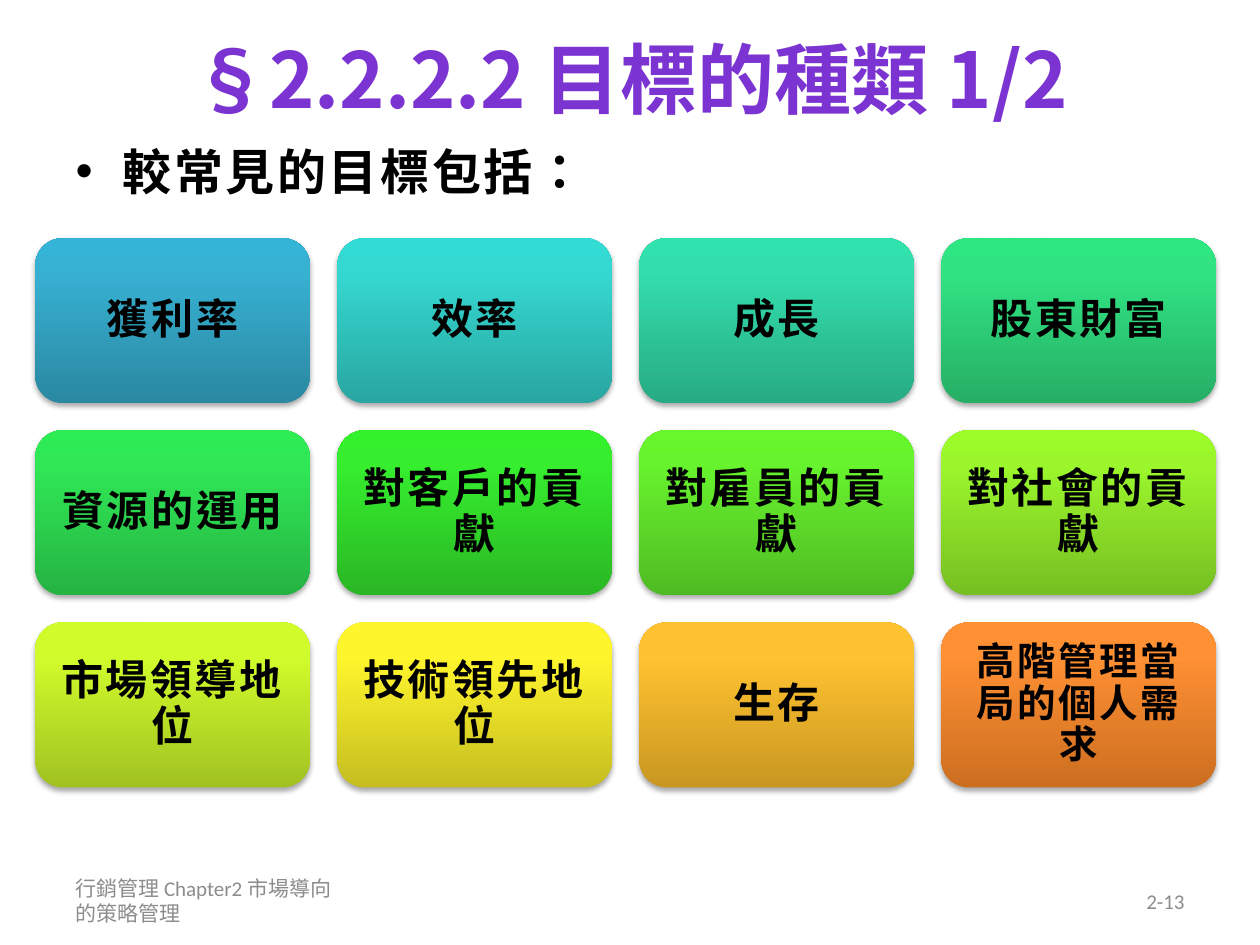
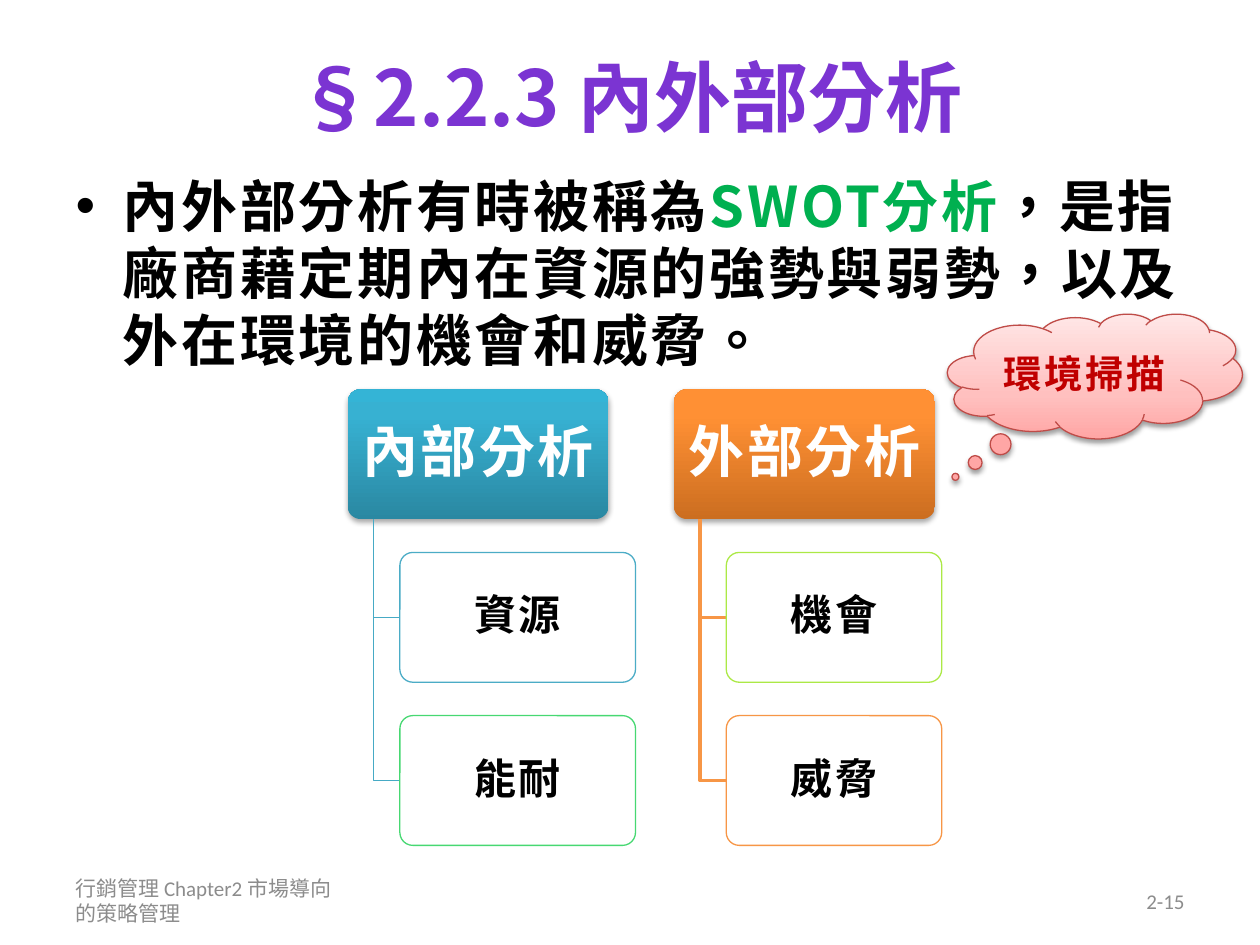
from lxml import etree
from pptx import Presentation
from pptx.dml.color import RGBColor
from pptx.enum.shapes import MSO_SHAPE
from pptx.enum.text import MSO_ANCHOR, MSO_AUTO_SIZE, PP_ALIGN
from pptx.oxml.ns import qn
from pptx.util import Inches, Pt

ROUNDED, CLOUD = MSO_SHAPE.ROUNDED_RECTANGLE, MSO_SHAPE.CLOUD_CALLOUT
LEFT, CENTER, RIGHT = PP_ALIGN.LEFT, PP_ALIGN.CENTER, PP_ALIGN.RIGHT
MIDDLE = MSO_ANCHOR.MIDDLE
NO_FIT = MSO_AUTO_SIZE.NONE

CJK_FONT, FOOTER_FONT = "Noto Sans CJK SC", "Calibri"
BLACK = RGBColor(0x00, 0x00, 0x00)
WHITE = RGBColor(0xFF, 0xFF, 0xFF)
PURPLE = RGBColor(0x7B, 0x34, 0xD2)
GREEN = RGBColor(0x00, 0xB0, 0x50)
GREY = RGBColor(0x8C, 0x8C, 0x8C)
DARK_RED = RGBColor(0xC0, 0x00, 0x00)
CLOUD_EDGE = RGBColor(0xBF, 0x4C, 0x48)
BLUE_LINE = RGBColor(0x46, 0xAA, 0xC5)
BLUE_EDGE = RGBColor(0x4B, 0xAC, 0xC6)
GREEN_EDGE = RGBColor(0x47, 0xD8, 0x72)
LIME_EDGE = RGBColor(0xAC, 0xE9, 0x46)
ORANGE = RGBColor(0xF7, 0x96, 0x46)


def ramp(*colours):
    """Colours of a gradient, from bottom to top."""
    return [RGBColor.from_string(colour) for colour in colours]


BLUE_RAMP = ramp("2A88A2", "37B1D2", "34B4D6")
ORANGE_RAMP = ramp("CC6E20", "FF9034", "FF9136")
PINK_RAMP = ramp("FFA6A5", "FFC0BF", "FFE7E7")

# Content
FOOTER = "行銷管理 Chapter2 市場導向的策略管理"

GOALS_TITLE = "§2.2.2.2 目標的種類 1/2"
GOALS_BODY = [("較常見的目標包括：", BLACK)]
GOALS = [
    ("獲利率", BLUE_RAMP),
    ("效率", ramp("29A6A1", "35D8D1", "32DCD5")),
    ("成長", ramp("27AB84", "33DDAC", "30E2AE")),
    ("股東財富", ramp("26AF65", "31E383", "2EE783")),
    ("資源的運用", ramp("25B342", "30E856", "2CED54")),
    ("對客戶的貢獻", ramp("2AB724", "36EE2E", "33F22B")),
    ("對雇員的貢獻", ramp("4FBB23", "67F32D", "66F82A")),
    ("對社會的貢獻", ramp("77BF22", "9BF72C", "9CFD28")),
    ("市場領導地位", ramp("A1C221", "D1FC2B", "D3FF2A")),
    ("技術領先地位", ramp("C6BE21", "FFF52C", "FFF52E")),
    ("生存", ramp("C99721", "FFC230", "FFC232")),
    ("高階管理當局的個人需求", ORANGE_RAMP),
]

SWOT_TITLE = "§2.2.3 內外部分析"
SWOT_BODY = [
    ("內外部分析有時被稱為", BLACK),
    ("SWOT分析", GREEN),
    ("，是指廠商藉定期內在資源的強勢與弱勢，以及外在環境的機會和威脅。", BLACK),
]
BRANCHES = [
    dict(head="內部分析", left=2.76, ramp=BLUE_RAMP, line=BLUE_LINE, weight=0.75,
         child_width=1.87, children=[("資源", BLUE_EDGE), ("能耐", GREEN_EDGE)]),
    dict(head="外部分析", left=5.35, ramp=ORANGE_RAMP, line=ORANGE, weight=2,
         child_width=1.71, children=[("機會", LIME_EDGE), ("威脅", ORANGE)]),
]
CLOUD_TEXT = "環境掃描"


# Text
def add_span(para, text, size, colour, font=CJK_FONT, bold=True, spacing=0):
    span = para.add_run()
    span.text = text
    span.font.size, span.font.bold, span.font.name = Pt(size), bold, font
    span.font.color.rgb = colour
    props = span.font._element
    props.set("lang", "zh-TW")
    if spacing:
        props.set("spc", str(int(spacing * 100)))
    east_asian = etree.Element(qn("a:ea"), typeface=CJK_FONT)
    props.find(qn("a:latin")).addnext(east_asian)


def write_label(shape, text, size, colour, insets, line_spacing=0.9):
    frame = shape.text_frame
    frame.word_wrap, frame.vertical_anchor = True, MIDDLE
    across, down = insets
    frame.margin_left = frame.margin_right = Inches(across)
    frame.margin_top = frame.margin_bottom = Inches(down)
    para = frame.paragraphs[0]
    para.alignment, para.line_spacing = CENTER, line_spacing
    add_span(para, text, size, colour, spacing=1.5)


# Shapes
def add_panel(page, kind, left, top, width, height):
    panel = page.shapes.add_shape(kind, Inches(left), Inches(top),
                                  Inches(width), Inches(height))
    panel.shadow.inherit = False
    panel.line.fill.background()
    return panel


def set_gradient(shape, colours, middle=80):
    shape.fill.gradient()
    shape.fill.gradient_angle = 90
    stops = shape._element.spPr.find(".//" + qn("a:gsLst"))
    stops.clear()
    for position, colour in zip((0, middle, 100), colours):
        stop = etree.SubElement(stops, qn("a:gs"), pos=str(position * 1000))
        etree.SubElement(stop, qn("a:srgbClr"), val=str(colour))


def add_soft_shadow(shape, opacity=35):
    effects = shape._element.spPr.find(qn("a:effectLst"))
    shadow = etree.SubElement(effects, qn("a:outerShdw"), blurRad="40000",
                              dist="23000", dir="5400000", rotWithShape="0")
    colour = etree.SubElement(shadow, qn("a:srgbClr"), val=str(BLACK))
    etree.SubElement(colour, qn("a:alpha"), val=str(opacity * 1000))


def outline(shape, colour, weight=0.75):
    shape.line.color.rgb = colour
    shape.line.width = Pt(weight)


# What the pages share
def place(holder, top, height):
    holder.left, holder.top = Inches(0.5), Inches(top)
    holder.width, holder.height = Inches(9), Inches(height)
    holder.text_frame.auto_size = NO_FIT
    return holder.text_frame.paragraphs[0]


def add_footer(page, text, left, alignment, right_inset):
    box = page.shapes.add_textbox(Inches(left), Inches(6.95), Inches(2.33), Inches(0.4))
    frame = box.text_frame
    frame.word_wrap, frame.vertical_anchor = True, MIDDLE
    frame.margin_right = Inches(right_inset)
    para = frame.paragraphs[0]
    para.alignment = alignment
    add_span(para, text, 12, GREY, font=FOOTER_FONT, bold=False)


def add_page(deck, title, title_at, body, body_at, body_size, number):
    page = deck.slides.add_slide(deck.slide_layouts[1])
    para = place(page.shapes.title, *title_at)
    para.alignment = CENTER
    add_span(para, title, 44, PURPLE)
    para = place(page.placeholders[1], *body_at)
    para.space_before = Pt(0)
    for text, colour in body:
        add_span(para, text, body_size, colour, spacing=1.5)
    add_footer(page, FOOTER, 0.5, LEFT, 0.2)
    add_footer(page, number, 7.17, RIGHT, 0.1)
    return page


# Grid of goals
def add_goals(page, columns=4):
    for index, (goal, colours) in enumerate(GOALS):
        row, column = divmod(index, columns)
        tile = add_panel(page, ROUNDED, 0.28 + column * 2.397, 1.89 + row * 1.525,
                         2.18, 1.31)
        set_gradient(tile, colours)
        add_soft_shadow(tile)
        long_goal = len(goal) > 6
        write_label(tile, goal, 22 if long_goal else 24, BLACK,
                    (0.09, 0.09) if long_goal else (0.1, 0.1))


# Branch: a head with children hanging from a trunk
def add_branch(page, branch, top=3.09, head_width=2.07, height=1.03, step=1.295):
    left = branch["left"]
    trunk, child_left = left + head_width * 0.1, left + head_width * 0.2
    head = add_panel(page, ROUNDED, left, top, head_width, height)
    head.adjustments[0] = 0.1
    set_gradient(head, branch["ramp"])
    add_soft_shadow(head)
    write_label(head, branch["head"], 32, WHITE, (0.07, 0.04))

    for order, (text, edge) in enumerate(branch["children"], start=1):
        child_top = top + order * step
        middle = child_top + height / 2
        builder = page.shapes.build_freeform(Inches(trunk), Inches(top + height))
        builder.add_line_segments([(Inches(trunk), Inches(middle)),
                                   (Inches(child_left), Inches(middle))], close=False)
        elbow = builder.convert_to_shape()
        elbow.shadow.inherit = False
        elbow.fill.background()
        outline(elbow, branch["line"], branch["weight"])

        child = add_panel(page, ROUNDED, child_left, child_top,
                          branch["child_width"], height)
        child.adjustments[0] = 0.1
        child.fill.solid()
        child.fill.fore_color.rgb = WHITE
        outline(child, edge)
        write_label(child, text, 24, BLACK, (0.05, 0.03))


def add_cloud(page):
    cloud = add_panel(page, CLOUD, 7.52, 2.49, 2.34, 0.99)
    cloud.adjustments[0], cloud.adjustments[1] = -0.473, 0.807
    set_gradient(cloud, PINK_RAMP, middle=35)
    outline(cloud, CLOUD_EDGE)
    add_soft_shadow(cloud, opacity=38)
    write_label(cloud, CLOUD_TEXT, 22, DARK_RED, (0.1, 0.05), line_spacing=1)


def main():
    deck = Presentation()
    deck.slide_width, deck.slide_height = Inches(10), Inches(7.5)

    goals_page = add_page(deck, GOALS_TITLE, (0, 1.23), GOALS_BODY, (1.07, 0.71), 28, "2-13")
    add_goals(goals_page)

    swot_page = add_page(deck, SWOT_TITLE, (0.13, 1.26), SWOT_BODY, (1.31, 2.2), 32, "2-15")
    for branch in BRANCHES:
        add_branch(swot_page, branch)
    add_cloud(swot_page)

    deck.save("out.pptx")


if __name__ == "__main__":
    main()
